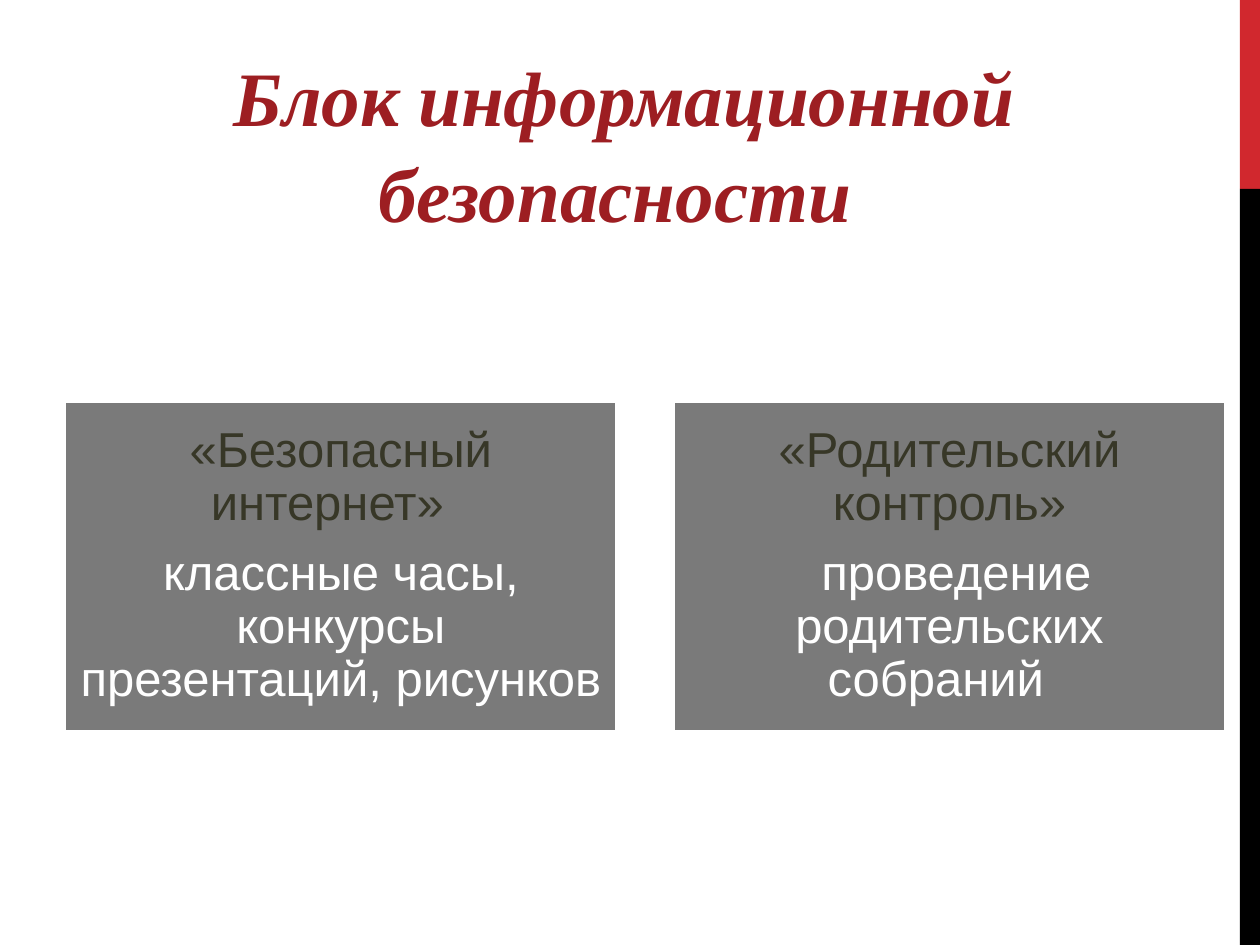
from pptx import Presentation
from pptx.dml.color import RGBColor
from pptx.enum.shapes import MSO_SHAPE
from pptx.enum.text import MSO_ANCHOR, PP_ALIGN
from pptx.util import Inches, Pt

RECT = MSO_SHAPE.RECTANGLE
CENTER = PP_ALIGN.CENTER
MIDDLE, BOTTOM = MSO_ANCHOR.MIDDLE, MSO_ANCHOR.BOTTOM

WIDTH, HEIGHT = 10, 7.5
MARGIN = 0.51
CARD_WIDTH, CARD_GAP = 4.39, 0.44
STRIPE_WIDTH = 0.16

TITLE = "Блок информационной безопасности "
CARDS = [
    ("«Безопасный интернет»  ",
     "классные часы, конкурсы презентаций, рисунков "),
    ("«Родительский контроль»",
     " проведение родительских собраний  "),
]


def color(value):
    return RGBColor.from_string(value)


def add_rect(page, box, fill):
    shape = page.shapes.add_shape(RECT, *map(Inches, box))
    shape.shadow.inherit = False
    shape.fill.solid()
    shape.fill.fore_color.rgb = color(fill)
    shape.line.fill.background()
    return shape


def style(para, name, size, tint, spacing):
    para.alignment = CENTER
    para.line_spacing = spacing
    para.font.name = name
    para.font.size = Pt(size)
    para.font.color.rgb = color(tint)


def add_stripe(page, box):
    """Side stripe: the top fifth red, the rest black."""
    left, top, width, height = box
    fifth = height / 5
    add_rect(page, (left, top, width, fifth), "D1282E")
    add_rect(page, (left, top + fifth, width, height - fifth), "000000")


def add_title(page, box):
    frame = page.shapes.add_textbox(*map(Inches, box)).text_frame
    frame.word_wrap = True
    frame.vertical_anchor = BOTTOM
    para = frame.paragraphs[0]
    para.text = TITLE
    style(para, "Times New Roman", 44, "9D1E22", 1.04)
    para.font.bold = para.font.italic = True


def add_card(page, box, heading, details):
    card = add_rect(page, box, "7A7A7A")
    card.line.color.rgb = color("FFFFFF")
    card.line.width = Pt(2.25)
    frame = card.text_frame
    frame.word_wrap = True
    frame.vertical_anchor = MIDDLE
    frame.margin_left = frame.margin_right = Inches(0.12)
    frame.margin_top = frame.margin_bottom = Inches(0.12)
    frame.text = f"{heading}\n{details}"
    for para, tint in zip(frame.paragraphs, ("373727", "FFFFFF")):
        style(para, "Arial", 28, tint, 0.9)
        para.space_after = Pt(9.8)


def add_cards(page, box):
    """Equal cards side by side from the left edge of the box."""
    left, top, width, height = box
    card_width = (width - CARD_GAP * (len(CARDS) - 1)) / len(CARDS)
    for column, (heading, details) in enumerate(CARDS):
        x = left + column * (card_width + CARD_GAP)
        add_card(page, (x, top, card_width, height), heading, details)


def main():
    deck = Presentation()
    deck.slide_width, deck.slide_height = Inches(WIDTH), Inches(HEIGHT)
    page = deck.slides.add_slide(deck.slide_layouts[6])
    add_stripe(page, (WIDTH - STRIPE_WIDTH, 0, STRIPE_WIDTH, HEIGHT))
    add_cards(page, (MARGIN, 3.18, 2 * CARD_WIDTH + CARD_GAP, 2.63))
    add_title(page, (MARGIN, 0.36, 8.89, 1.58))
    deck.save("out.pptx")


if __name__ == "__main__":
    main()
